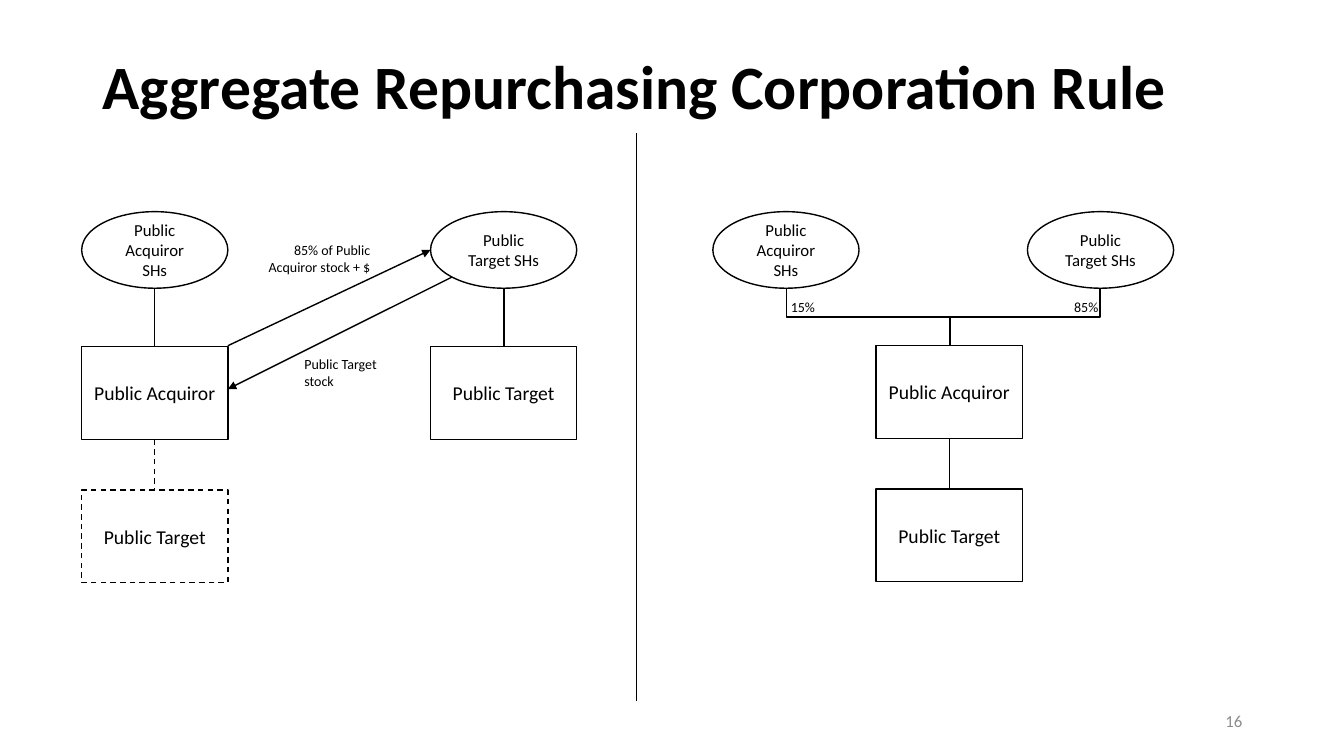
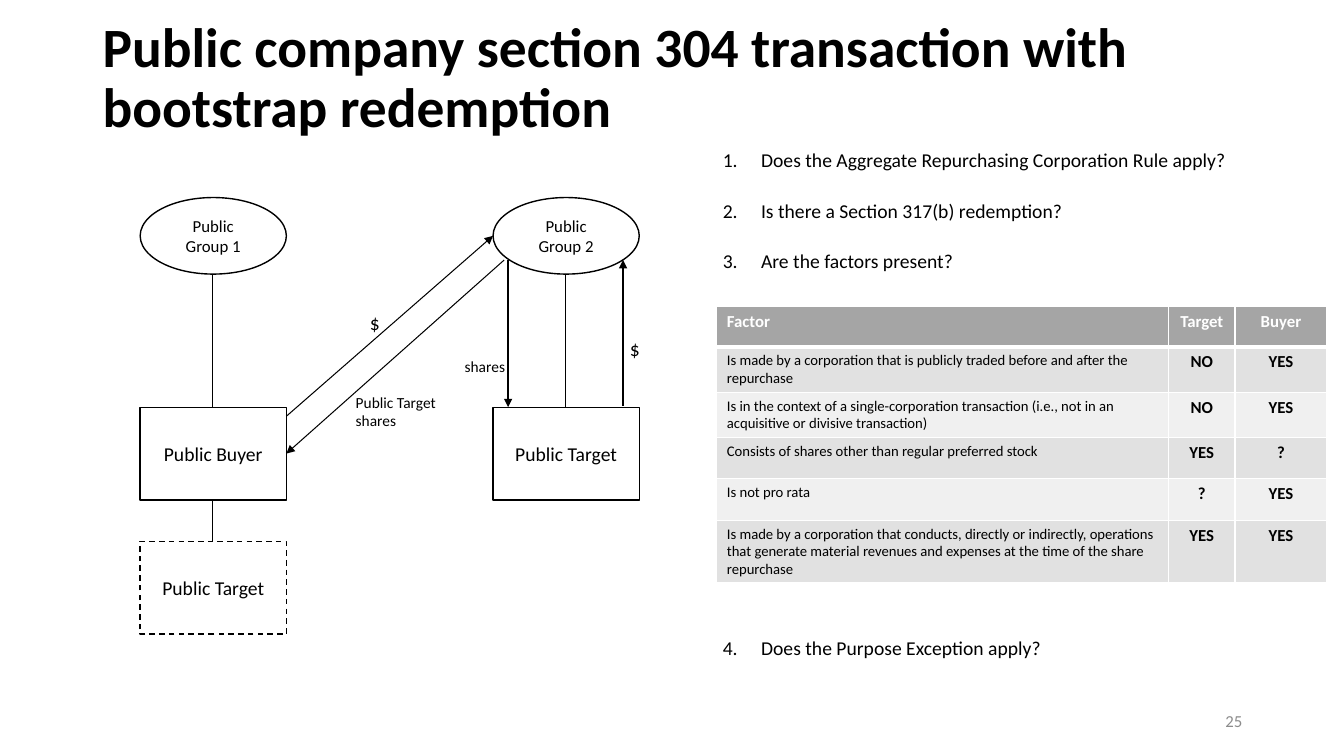
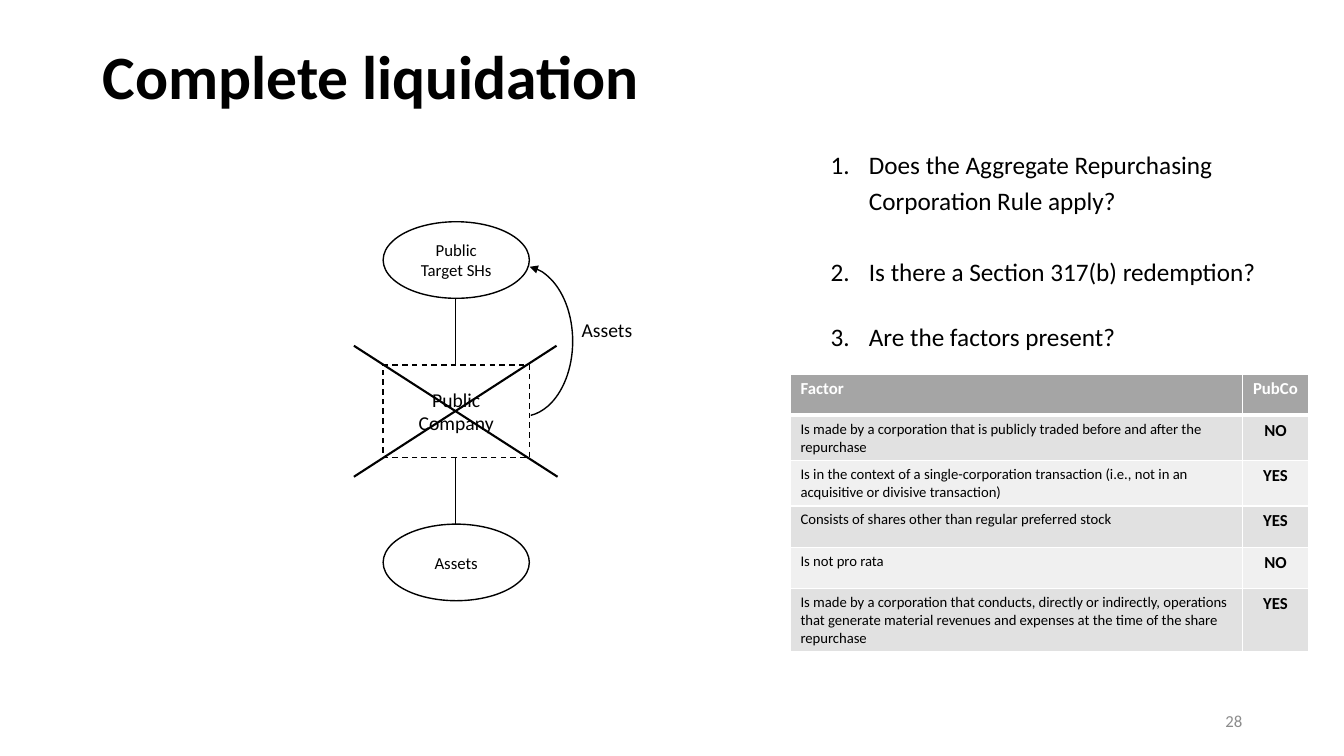
from dataclasses import dataclass

from lxml import etree
from pptx import Presentation
from pptx import util as u
from pptx.dml.color import RGBColor
from pptx.enum import dml, shapes, text
from pptx.oxml.ns import qn

# Shared look; one px is a hundredth of an inch
SCALE = 9144
FONT = "Calibri"
COLORS = {"ink": "000000", "white": "FFFFFF", "number": "8C8C8C",
          "header": "A5A5A5", "odd": "E1E1E1", "even": "F0F0F0"}
LEFT, CENTER, RIGHT = text.PP_ALIGN.LEFT, text.PP_ALIGN.CENTER, text.PP_ALIGN.RIGHT
TOP, MIDDLE = text.MSO_ANCHOR.TOP, text.MSO_ANCHOR.MIDDLE
RECT, OVAL = shapes.MSO_SHAPE.RECTANGLE, shapes.MSO_SHAPE.OVAL
NODE_W = 145
NODE_STYLE = {RECT: (92, 14), OVAL: (76, 12)}  # height, text size
LIST_INDENT = 38


@dataclass
class Node:
    x: int
    y: int
    text: str
    kind: shapes.MSO_SHAPE = RECT
    dashed: bool = False


@dataclass
class Line:
    x1: int
    y1: int
    x2: int
    y2: int
    width: float = 1
    dashed: bool = False
    arrow: bool = False


@dataclass
class Label:
    x: int
    y: int
    w: int
    h: int
    text: str
    size: float = 10
    align: text.PP_ALIGN = LEFT
    anchor: text.MSO_ANCHOR = TOP
    bold: bool = False
    color: str = "ink"
    spacing: float = 1.0
    wrap: bool = True


@dataclass
class Item:
    text: str
    before: float = 0


def px(n: float) -> u.Emu:
    return u.Emu(round(n * SCALE))


def rgb(name: str) -> RGBColor:
    return RGBColor.from_string(COLORS[name])


def set_all(target, values: dict) -> None:
    for key, value in values.items():
        setattr(target, key, value)


# Text
def add_run(p, words: str, size: float, bold: bool = False, color: str = "ink") -> None:
    r = p.add_run()
    r.text = words
    set_all(r.font, {"name": FONT, "size": u.Pt(size), "bold": bold})
    r.font.color.rgb = rgb(color)


def write(tf, words: str, size: float, align=LEFT, anchor=TOP, bold: bool = False,
          color: str = "ink", spacing: float = 1.0, wrap: bool = True) -> None:
    set_all(tf, {"word_wrap": wrap, "vertical_anchor": anchor})
    for i, words_line in enumerate(words.split("\n")):
        p = tf.add_paragraph() if i else tf.paragraphs[0]
        set_all(p, {"alignment": align, "line_spacing": spacing})
        add_run(p, words_line, size, bold, color)


def add_label(s, b: Label) -> None:
    sp = s.shapes.add_textbox(*map(px, (b.x, b.y, b.w, b.h)))
    write(sp.text_frame, b.text, b.size, b.align, b.anchor, b.bold, b.color,
          b.spacing, b.wrap)


def add_list(s, x: int, w: int, size: float, items: list[Item]) -> None:
    tf = s.shapes.add_textbox(*map(px, (x, 137, w, 591))).text_frame
    tf.word_wrap = True
    for i, item in enumerate(items):
        p = tf.add_paragraph() if i else tf.paragraphs[0]
        set_all(p, {"line_spacing": 1.2, "space_before": u.Pt(item.before)})
        pPr = p._p.get_or_add_pPr()
        pPr.set("marL", str(px(LIST_INDENT)))
        pPr.set("indent", str(px(-LIST_INDENT)))
        etree.SubElement(pPr, qn("a:buAutoNum"), type="arabicPeriod")
        add_run(p, item.text, size)


# Shapes and lines
def style_line(sp, width: float = 1, dashed: bool = False, arrow: bool = False) -> None:
    sp.line.color.rgb = rgb("ink")
    sp.line.width = u.Pt(width)
    if dashed:
        sp.line.dash_style = dml.MSO_LINE.DASH
    if arrow:
        ln = sp.element.spPr.find(qn("a:ln"))
        etree.SubElement(ln, qn("a:headEnd"), type="triangle")


def add_outline(s, kind, x: int, y: int, w: int, h: int):
    sp = s.shapes.add_shape(kind, *map(px, (x, y, w, h)))
    sp.shadow.inherit = False
    sp.fill.background()
    return sp


def add_node(s, n: Node) -> None:
    height, size = NODE_STYLE[n.kind]
    sp = add_outline(s, n.kind, n.x, n.y, NODE_W, height)
    style_line(sp, dashed=n.dashed)
    write(sp.text_frame, n.text, size, CENTER, MIDDLE)


def connect(s, kind, *ends: float):
    sp = s.shapes.add_connector(kind, *map(px, ends))
    etree.SubElement(sp.element.spPr, qn("a:effectLst"))
    return sp


def add_line(s, n: Line) -> None:
    sp = connect(s, shapes.MSO_CONNECTOR.STRAIGHT, n.x1, n.y1, n.x2, n.y2)
    style_line(sp, n.width, n.dashed, n.arrow)


def add_elbow(s, x1: int, y1: int, x2: int, y2: int) -> None:
    """Elbow that leaves and arrives vertically: a turned horizontal one."""
    cx, cy = (x1 + x2) / 2, (y1 + y2) / 2
    turn = 1 if x2 < x1 else -1
    dx, dy = turn * (x2 - x1) / 2, turn * (y2 - y1) / 2
    sp = connect(s, shapes.MSO_CONNECTOR.ELBOW, cx - dy, cy + dx, cx + dy, cy - dx)
    sp.rotation = 90 * turn % 360
    style_line(sp)


def add_parts(s, parts: list) -> None:
    draw = {Node: add_node, Line: add_line, Label: add_label}
    for part in parts:
        draw[type(part)](s, part)


# Factor table
FACTORS = [
    "Is made by a corporation that is publicly traded before and after the repurchase",
    "Is in the context of a single-corporation transaction (i.e., not in an "
    "acquisitive or divisive transaction)",
    "Consists of shares other than regular preferred stock",
    "Is not pro rata",
    "Is made by a corporation that conducts, directly or indirectly, operations that "
    "generate material revenues and expenses at the time of the share repurchase",
]


def add_borders(cell, top: float, bottom: float) -> None:
    tcPr = cell._tc.get_or_add_tcPr()
    for side, width in {"L": 1, "R": 1, "T": top, "B": bottom}.items():
        ln = etree.SubElement(tcPr, qn(f"a:ln{side}"), w=str(u.Pt(width)))
        fill = etree.SubElement(ln, qn("a:solidFill"))
        etree.SubElement(fill, qn("a:srgbClr"), val=COLORS["white"])


def add_factor_table(s, x: int, y: int, head_h: int, answers: dict[str, list[str]],
                     widths: list[int]) -> None:
    rows = [["Factor", *answers], *map(list, zip(FACTORS, *answers.values()))]
    heights = [head_h] + [41] * len(FACTORS)
    table = s.shapes.add_table(len(rows), len(widths),
                               *map(px, (x, y, sum(widths), sum(heights)))).table
    for col, w in zip(table.columns, widths):
        col.width = px(w)
    for i, (row, h) in enumerate(zip(rows, heights)):
        table.rows[i].height = px(h)
        fill = "header" if i == 0 else "odd" if i % 2 else "even"
        for j, words in enumerate(row):
            cell = table.cell(i, j)
            add_borders(cell, 3 if i == 1 else 1, 3 if i == 0 else 1)
            cell.fill.solid()
            cell.fill.fore_color.rgb = rgb(fill)
            is_factor = i > 0 and j == 0
            write(cell.text_frame, words, 10.5 if is_factor else 12,
                  CENTER if j else LEFT, bold=not is_factor,
                  color="ink" if i else "white")


# Slides
def new_slide(prs, title: str, number: int, size: float = 44, y: int = 40, h: int = 78):
    s = prs.slides.add_slide(prs.slide_layouts[6])
    add_parts(s, [
        Label(92, y, 1150, h, title, size, anchor=MIDDLE, bold=True, spacing=0.9),
        Label(942, 695, 300, 40, str(number), 12, RIGHT, MIDDLE, color="number"),
    ])
    return s


def repurchasing_rule(prs) -> None:
    s = new_slide(prs, "Aggregate Repurchasing Corporation Rule", 16, y=16, h=145)
    add_parts(s, [
        # Before
        Node(81, 210, "Public Acquiror SHs", OVAL),
        Node(427, 210, "Public Target SHs", OVAL),
        Node(81, 344, "Public Acquiror"),
        Node(427, 344, "Public Target"),
        Node(81, 486, "Public Target", dashed=True),
        Line(153, 286, 153, 344),
        Line(500, 286, 500, 344),
        Line(153, 436, 153, 486, dashed=True),
        Line(427, 248, 226, 343, arrow=True),
        Line(226, 386, 448, 275, arrow=True),
        Label(242, 235, 135, 44, "85% of Public Acquiror stock + $", align=RIGHT),
        Label(292, 348, 135, 44, "Public Target\nstock"),
        Line(631, 132, 631, 695, width=0.5),
        # After
        Node(707, 210, "Public Acquiror SHs", OVAL),
        Node(1019, 210, "Public Target SHs", OVAL),
        Node(869, 343, "Public Acquiror"),
        Node(869, 485, "Public Target"),
        Line(942, 435, 942, 485),
        Label(683, 291, 135, 27, "15%", align=RIGHT),
        Label(964, 291, 135, 27, "85%", align=RIGHT),
    ])
    for x in (780, 1091):
        add_elbow(s, x, 286, 942, 343)


def bootstrap_redemption(prs) -> None:
    s = new_slide(prs, "Public company section 304 transaction with bootstrap redemption",
                  25, size=39.6)
    add_parts(s, [
        Node(139, 196, "Public Group 1", OVAL),
        Node(489, 196, "Public Group 2", OVAL),
        Node(139, 404, "Public Buyer"),
        Node(489, 404, "Public Target"),
        Node(139, 537, "Public Target", dashed=True),
        Line(211, 272, 211, 404),
        Line(561, 272, 561, 404),
        Line(211, 496, 211, 537),
        Line(618, 258, 618, 403, arrow=True),
        Line(504, 404, 504, 258, arrow=True),
        Line(284, 450, 500, 258, width=0.75, arrow=True),
        Line(489, 234, 284, 413, width=0.75, arrow=True),
        Label(615, 329, 30, 34, "$", 14),
        Label(357, 304, 30, 34, "$", 14),
        Label(451, 349, 75, 29, "shares", 11),
        Label(343, 385, 104, 47, "Public Target shares", 11),
    ])
    add_list(s, 707, 591, 14, [
        Item("Does the Aggregate Repurchasing Corporation Rule apply?"),
        Item("Is there a Section 317(b) redemption?", 16.5),
        Item("Are the factors present?", 15.5),
        Item("Does the Purpose Exception apply?", 256),
    ])
    add_factor_table(s, 711, 304, 40, {"Target": ["NO", "NO", "YES", "?", "YES"],
                                       "Buyer": ["YES", "YES", "?", "YES", "YES"]},
                     [448, 66, 91])


def complete_liquidation(prs) -> None:
    s = new_slide(prs, "Complete liquidation", 28)
    add_parts(s, [
        Node(380, 220, "Public Target SHs", OVAL),
        Node(380, 362, "Public\nCompany", dashed=True),
        Node(380, 520, "Assets", OVAL),
        Line(452, 296, 452, 362),
        Line(452, 454, 452, 520),
        Line(351, 343, 553, 473, width=1.5),
        Line(552, 343, 351, 473, width=1.5),
        Label(567, 311, 71, 34, "Assets", 14, wrap=False),
    ])
    arc = add_outline(s, shapes.MSO_SHAPE.ARC, 469, 264, 99, 149)
    arc.adjustments[0], arc.adjustments[1] = 165.13, 50.34
    style_line(arc, arrow=True)
    add_factor_table(s, 784, 371, 41, {"PubCo": ["NO", "YES", "YES", "NO", "YES"]},
                     [448, 66])
    add_list(s, 814, 484, 18, [
        Item("Does the Aggregate Repurchasing Corporation Rule apply?"),
        Item("Is there a Section 317(b) redemption?", 25),
        Item("Are the factors present?", 20.5),
    ])


def main() -> None:
    prs = Presentation()
    set_all(prs, {"slide_width": px(1333), "slide_height": px(750)})
    for build in (repurchasing_rule, bootstrap_redemption, complete_liquidation):
        build(prs)
    prs.save("out.pptx")


if __name__ == "__main__":
    main()
